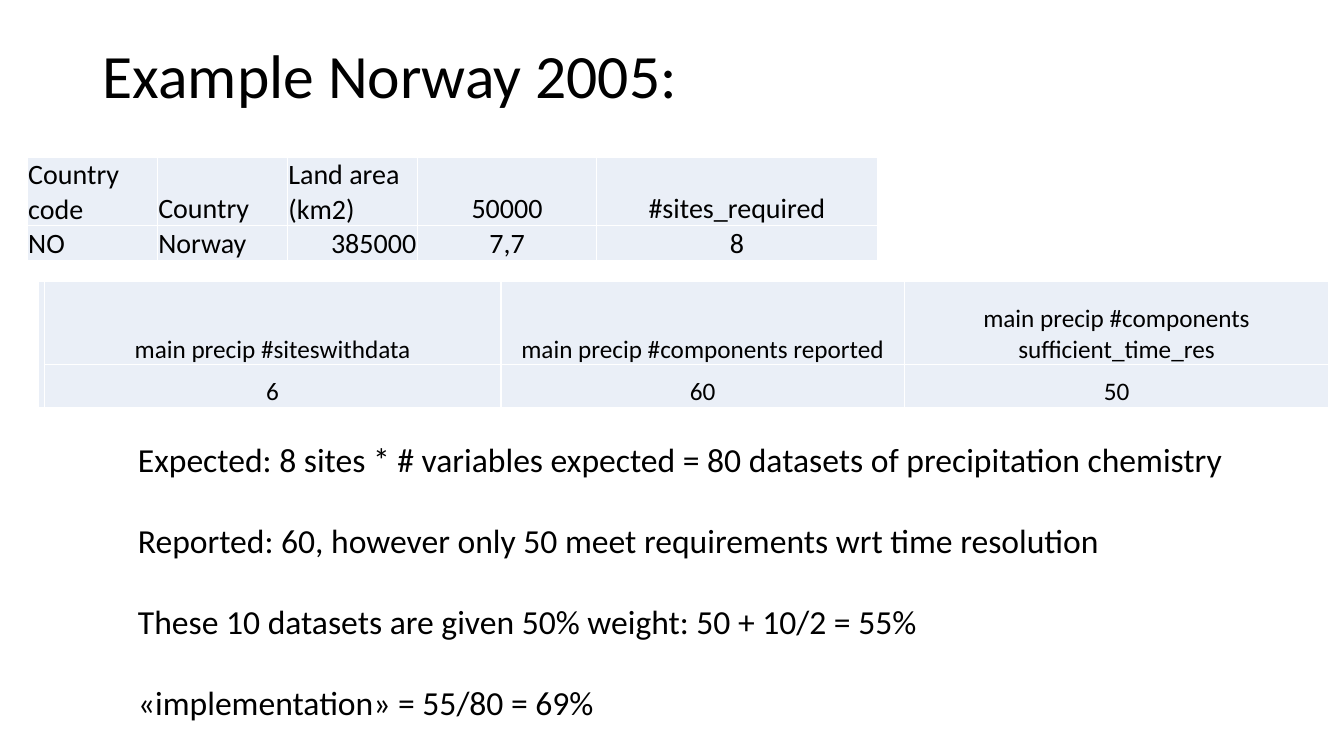
from pptx import Presentation
from pptx.dml.color import RGBColor
from pptx.enum.text import MSO_ANCHOR as Anchor, PP_ALIGN as Align
from pptx.util import Inches, Pt

BLACK = "000000"
PALE_BLUE = "EAEFF7"
ALIGNMENTS = {"l": Align.LEFT, "c": Align.CENTER, "r": Align.RIGHT}

SITE_ROWS = [
    ["Country code", "Country", "Land area (km2)", "50000", "#sites_required"],
    ["NO", "Norway", "385000", "7,7", "8"],
]
PRECIP_ROWS = [
    ["", "main precip #siteswithdata", "main precip #components reported",
     "main precip #components sufficient_time_res"],
    ["", "6", "60", "50"],
]
CALCULATION = [
    "Expected: 8 sites * # variables expected = 80 datasets of precipitation chemistry",
    "Reported: 60, however only 50 meet requirements wrt time resolution",
    "These 10 datasets are given 50% weight: 50 + 10/2 = 55%",
    "«implementation» = 55/80 = 69%",
]


def colour(hex_code):
    return RGBColor.from_string(hex_code)


def style(paragraph, size):
    paragraph.font.name = "Calibri"
    paragraph.font.size = Pt(size)
    paragraph.font.color.rgb = colour(BLACK)


def add_text(slide, box, lines, size, wrap=True, anchor=Anchor.TOP, line_spacing=1.0, gap=0):
    frame = slide.shapes.add_textbox(*map(Inches, box)).text_frame
    frame.word_wrap = wrap
    frame.vertical_anchor = anchor
    frame.text = "\n".join(lines)
    for paragraph in frame.paragraphs:
        style(paragraph, size)
        paragraph.line_spacing = line_spacing
    for paragraph in frame.paragraphs[:-1]:
        paragraph.space_after = Pt(gap)


def fill_cell(cell, text, size, align):
    cell.margin_left = cell.margin_right = cell.margin_top = Inches(0.01)
    cell.margin_bottom = 0
    cell.vertical_anchor = Anchor.BOTTOM
    cell.fill.solid()
    cell.fill.fore_color.rgb = colour(PALE_BLUE)
    cell.text = text
    paragraph = cell.text_frame.paragraphs[0]
    paragraph.alignment = ALIGNMENTS[align]
    style(paragraph, size)


def add_grid(slide, left, top, widths, heights, rows, aligns, size):
    frame = slide.shapes.add_table(
        len(rows), len(widths), Inches(left), Inches(top),
        Inches(sum(widths)), Inches(sum(heights)))
    table = frame.table
    table.first_row = table.horz_banding = False
    for column, width in zip(table.columns, widths):
        column.width = Inches(width)
    for row, height, texts, row_aligns in zip(table.rows, heights, rows, aligns):
        row.height = Inches(height)
        for cell, text, align in zip(row.cells, texts, row_aligns):
            fill_cell(cell, text, size, align)
    return table


def main():
    deck = Presentation()
    deck.slide_width, deck.slide_height = Inches(13.33), Inches(7.5)
    slide = deck.slides.add_slide(deck.slide_layouts[6])

    add_text(slide, (0.92, 0.05, 11.5, 1.45), ["Example Norway 2005:"], 44,
             anchor=Anchor.MIDDLE, line_spacing=0.9)
    precip = add_grid(slide, 0.38, 2.79, [0.05, 4.53, 4, 4.21], [0.83, 0.42],
                      PRECIP_ROWS, ["cccc", "cccc"], 18)
    precip.cell(0, 0).merge(precip.cell(1, 0))
    add_grid(slide, 0.27, 1.56, [1.29, 1.29, 1.29, 1.78, 2.78], [0.68, 0.34],
             SITE_ROWS, ["lllcc", "llrcc"], 20)
    add_text(slide, (1.27, 4.31, 11.06, 3.33), CALCULATION, 24, wrap=False, gap=29)

    deck.save("out.pptx")


if __name__ == "__main__":
    main()
